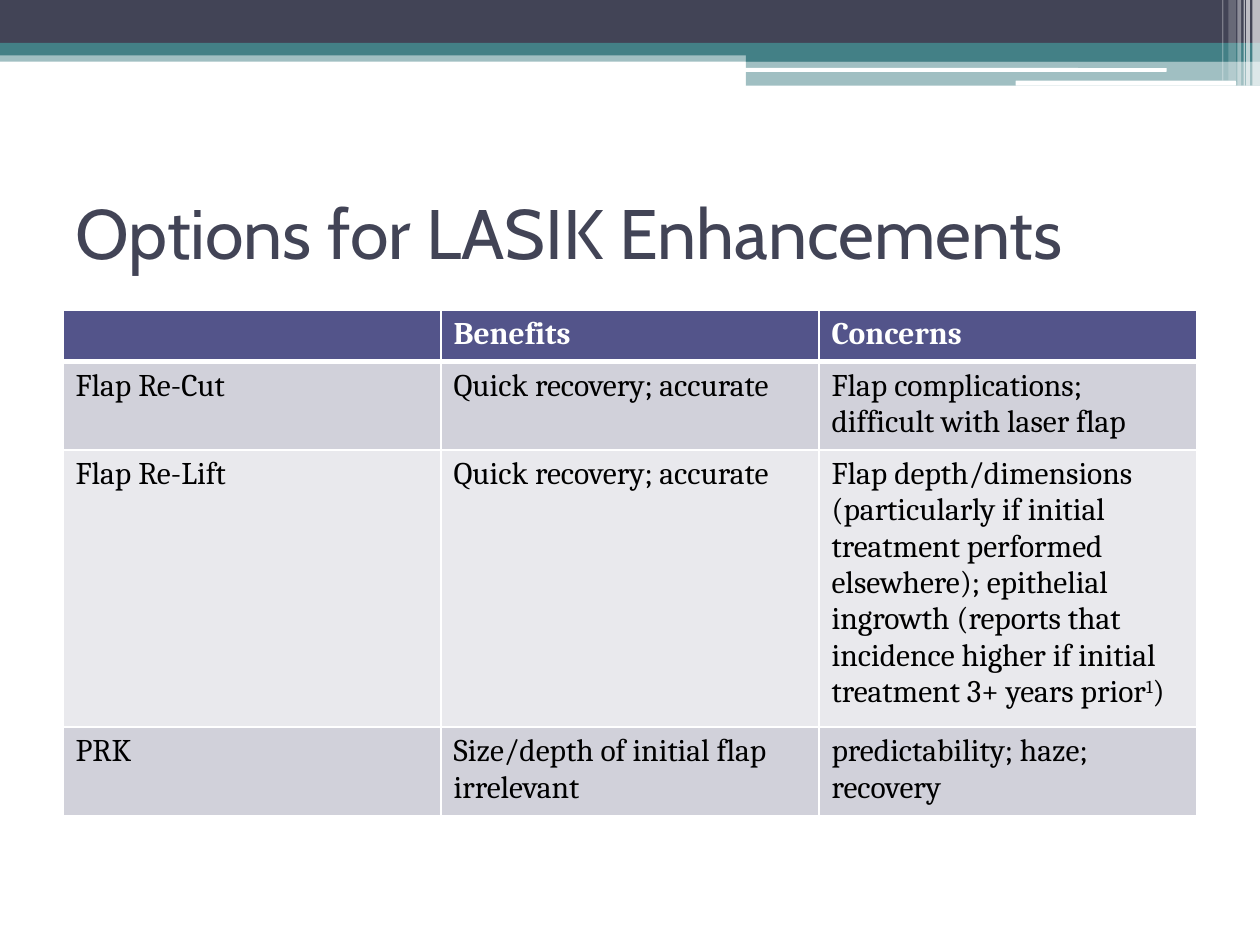
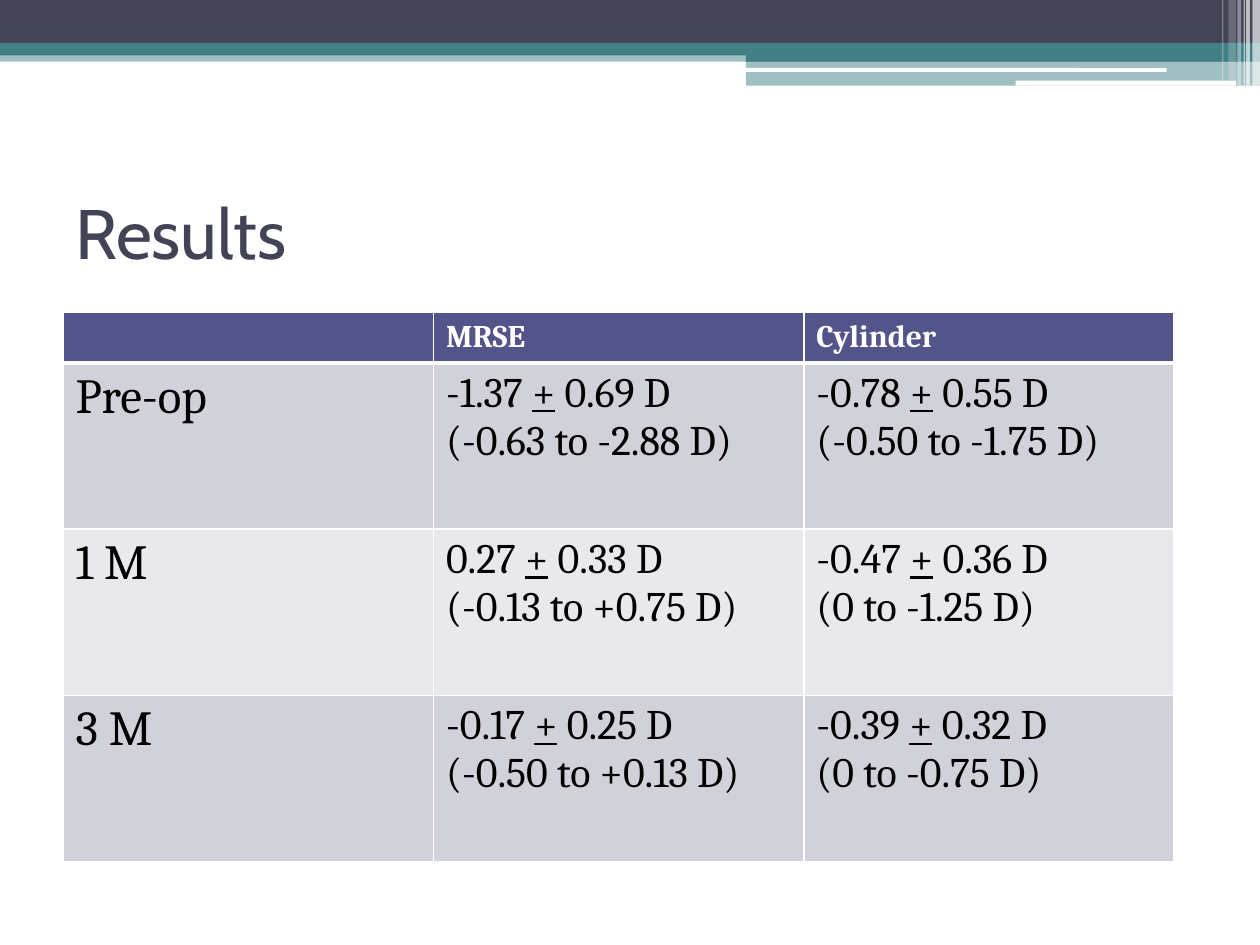
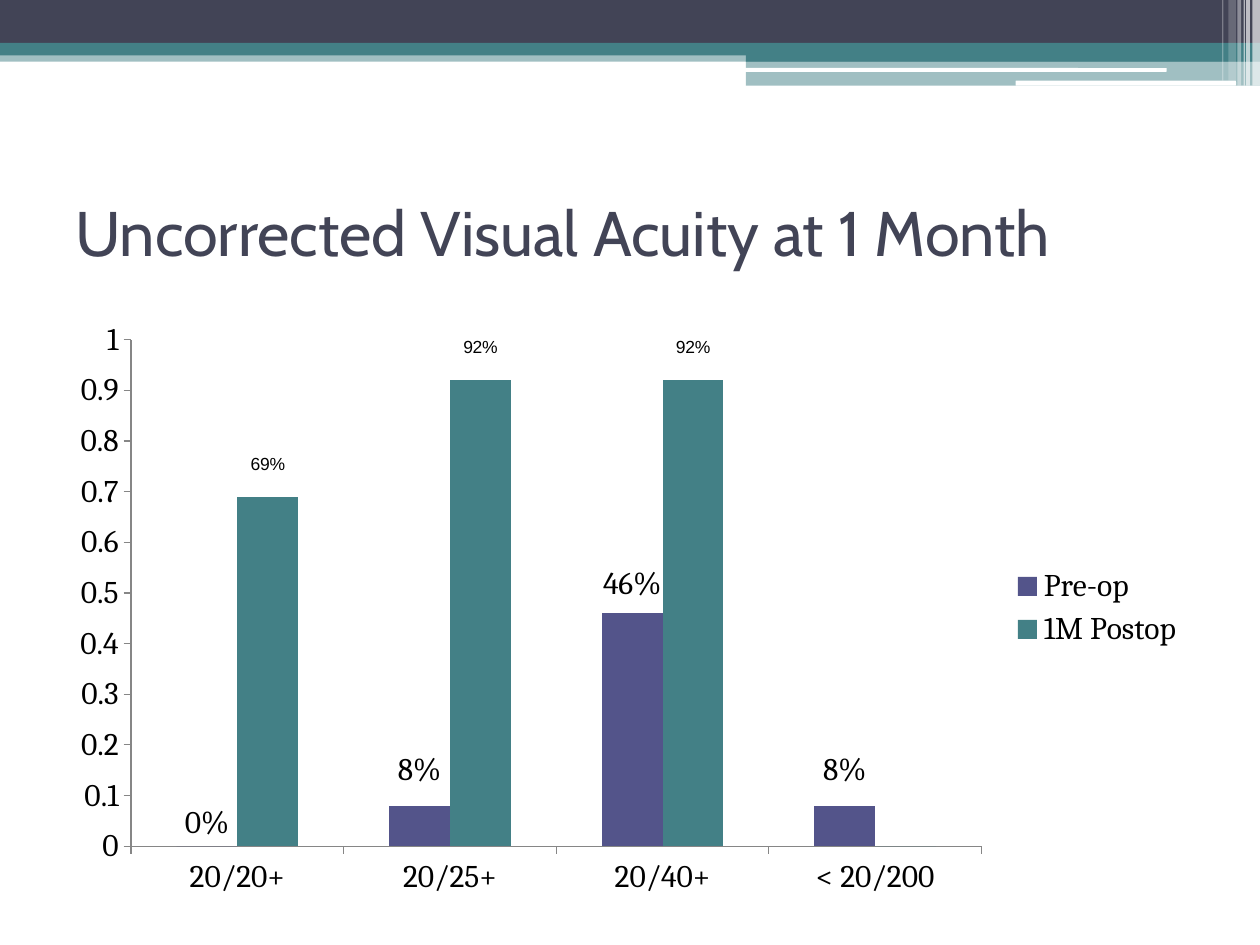
from lxml import etree
from pptx import Presentation
from pptx.chart.data import CategoryChartData
from pptx.dml.color import RGBColor
from pptx.enum.chart import XL_CHART_TYPE as ChartType
from pptx.enum.chart import XL_LABEL_POSITION as LabelPosition
from pptx.enum.chart import XL_LEGEND_POSITION as LegendPosition
from pptx.enum.chart import XL_TICK_MARK as TickMark
from pptx.enum.shapes import MSO_SHAPE as Shape
from pptx.enum.text import MSO_ANCHOR as Anchor
from pptx.oxml import parse_xml
from pptx.oxml.ns import nsdecls, qn
from pptx.util import Inches, Pt

SLATE = RGBColor(0x42, 0x44, 0x56)
TEAL = RGBColor(0x43, 0x80, 0x86)
INDIGO = RGBColor(0x53, 0x54, 0x8A)
ROW_DARK = RGBColor(0xD1, 0xD1, 0xDA)
ROW_LIGHT = RGBColor(0xE9, 0xE9, 0xED)
AXIS_GRAY = RGBColor(0x86, 0x86, 0x86)
WHITE = RGBColor(0xFF, 0xFF, 0xFF)
BLACK = RGBColor(0, 0, 0)
TITLE_FONT, BODY_FONT = "Cabin", "Cambria"

# Header decoration: left, top, width, height, colour, opacity in percent
BANDS = [
    (0, 0.4, 10, 0.09, TEAL, 50),
    (0, 0, 10, 0.34, SLATE, 100),
    (0, 0.34, 10, 0.1, TEAL, 100),
    (5.92, 0.39, 4.08, 0.1, TEAL, 100),
    (5.92, 0.48, 4.08, 0.2, TEAL, 50),
    (5.91, 0.54, 3.35, 0.03, WHITE, 100),
    (8.06, 0.64, 1.75, 0.04, WHITE, 100),
    (9.94, 0, 0.06, 0.68, WHITE, 65),
    (9.89, 0, 0.03, 0.68, WHITE, 65),
    (9.87, 0, 0.01, 0.68, WHITE, 60),
    (9.82, 0, 0.03, 0.68, WHITE, 40),
    (9.75, 0, 0.06, 0.64, WHITE, 20),
    (9.7, 0, 0.01, 0.64, WHITE, 30),
]
TITLES = [
    ("Options for LASIK Enhancements", 40),
    ("Results", 40),
    ("Uncorrected Visual Acuity at 1 Month", 36),
]


def add_run(paragraph, text, size, color, font=BODY_FONT, bold=False):
    run = paragraph.add_run()
    run.text = text
    run.font.name, run.font.size, run.font.bold = font, Pt(size), bold
    run.font.color.rgb = color
    return run


def add_grid(slide, top, col_width, row_heights, rows, label_size, body_size):
    """Each cell is a tuple of runs: "+" is underlined, "1" raised, "\\n" breaks."""
    table = slide.shapes.add_table(
        len(rows), len(rows[0]), Inches(0.5), Inches(top),
        Inches(col_width * len(rows[0])), Inches(sum(row_heights))).table
    for column in table.columns:
        column.width = Inches(col_width)
    for r, (row, height) in enumerate(zip(rows, row_heights)):
        table.rows[r].height = Inches(height)
        for c, runs in enumerate(row):
            cell = table.cell(r, c)
            paragraph = cell.text_frame.paragraphs[0]
            size = 18 if r == 0 else label_size if c == 0 else body_size
            for text in runs:
                if text == "\n":
                    paragraph.add_line_break()
                    continue
                run = add_run(paragraph, text, size, BLACK if r else WHITE, bold=r == 0)
                if text == "+":
                    run.font.underline = True
                elif text == "1":
                    run.font._element.set("baseline", "30000")
            # White borders, heavier under the header; they precede the fill
            for side in ("L", "R", "T", "B"):
                heavy = (side == "B" and r == 0) or (side == "T" and r == 1)
                cell._tc.get_or_add_tcPr().append(parse_xml(
                    f'<a:ln{side} {nsdecls("a")} w="{Pt(3 if heavy else 1)}"><a:solidFill>'
                    f'<a:srgbClr val="{WHITE}"/></a:solidFill></a:ln{side}>'))
            cell.fill.solid()
            cell.fill.fore_color.rgb = INDIGO if r == 0 else ROW_DARK if r % 2 else ROW_LIGHT


prs = Presentation()
prs.slide_width, prs.slide_height = Inches(10), Inches(7.5)

# Header bands and title on every slide
slides = []
for title, title_size in TITLES:
    slide = prs.slides.add_slide(prs.slide_layouts[6])
    slides.append(slide)
    for left, top, width, height, color, opacity in BANDS:
        outline = Shape.ROUNDED_RECTANGLE if height in (0.03, 0.04) else Shape.RECTANGLE
        band = slide.shapes.add_shape(
            outline, Inches(left), Inches(top), Inches(width), Inches(height))
        band.shadow.inherit = False
        band.line.fill.background()
        band.fill.solid()
        band.fill.fore_color.rgb = color
        if opacity < 100:
            tint = band._element.spPr.find(".//" + qn("a:srgbClr"))
            etree.SubElement(tint, qn("a:alpha"), val=str(opacity * 1000))
    heading = slide.shapes.add_textbox(
        Inches(0.5), Inches(1.25), Inches(9), Inches(1.17)).text_frame
    heading.word_wrap = True
    heading.vertical_anchor = Anchor.MIDDLE
    add_run(heading.paragraphs[0], title, title_size, SLATE, TITLE_FONT)
options_slide, results_slide, acuity_slide = slides

# Enhancement options
options = [
    ((), ("Benefits",), ("Concerns",)),
    (("Flap Re-Cut",), ("Quick recovery; accurate",),
     ("Flap complications; difficult with laser flap",)),
    (("Flap Re-Lift",), ("Quick recovery; accurate",),
     ("Flap depth/dimensions (particularly if initial treatment performed elsewhere); "
      "epithelial ingrowth (reports that incidence higher if initial treatment "
      "3+ years prior", "1", ")")),
    (("PRK",), ("Size/depth of initial flap irrelevant",),
     ("predictability; haze; recovery",)),
]
add_grid(options_slide, 2.46, 3, [0.41, 0.67, 2.12, 0.67], options, 18, 18)

# Refraction results: mean, deviation and range for each measure
measurements = [
    ("Pre-op", ("-1.37", "0.69", "-0.63 to -2.88"), ("-0.78", "0.55", "-0.50 to -1.75")),
    ("1 M", ("0.27", "0.33", "-0.13 to +0.75"), ("-0.47", "0.36", "0 to -1.25")),
    ("3 M", ("-0.17", "0.25", "-0.50 to +0.13"), ("-0.39", "0.32", "0 to -0.75")),
]
results = [((), ("MRSE",), ("Cylinder",))]
for visit, *measures in measurements:
    results.append([(visit,)] + [
        (f"{mean} ", "+", f" {deviation} D", "\n", f"({span} D)")
        for mean, deviation, span in measures])
add_grid(results_slide, 2.48, 2.94, [0.35] + [1.32] * 3, results, 28, 24)

# Visual acuity chart
acuity = CategoryChartData()
acuity.categories = ["20/20+", "20/25+", "20/40+", "< 20/200"]
acuity.add_series("Pre-op", (0, 0.08, 0.46, 0.08))
acuity.add_series("1M Postop", (0.69, 0.92, 0.92, 0))
chart = acuity_slide.shapes.add_chart(
    ChartType.COLUMN_CLUSTERED, Inches(0.5), Inches(2.46), Inches(9), Inches(4.73),
    acuity).chart
chart.has_title = False
chart.font.name, chart.font.size = BODY_FONT, Pt(18)
chart.font.color.rgb = BLACK
chart.has_legend = True
chart.legend.position = LegendPosition.RIGHT
chart.legend.include_in_layout = False

value_axis = chart.value_axis
value_axis.minimum_scale, value_axis.maximum_scale, value_axis.major_unit = 0, 1, 0.1
value_axis.has_major_gridlines = False
value_axis.tick_labels.number_format = "General"
value_axis.tick_labels.number_format_is_linked = False
for axis in (value_axis, chart.category_axis):
    axis.major_tick_mark = TickMark.OUTSIDE
    axis.format.line.color.rgb = AXIS_GRAY

plot = chart.plots[0]
plot.vary_by_categories = False
plot.gap_width, plot.overlap = 150, 0
plot_area = chart._chartSpace.chart.plotArea
for layout in plot_area.findall(qn("c:layout")):
    plot_area.remove(layout)
plot_area.insert(0, parse_xml(
    f'<c:layout {nsdecls("c")}><c:manualLayout><c:layoutTarget val="inner"/>'
    '<c:xMode val="edge"/><c:yMode val="edge"/><c:x val="0.06"/><c:y val="0.05"/>'
    '<c:w val="0.75"/><c:h val="0.85"/></c:manualLayout></c:layout>'))

# Series colour, label font and size, and upward label shift by point
series_styles = [
    (INDIGO, BODY_FONT, 18, {1: -0.02, 2: -0.01, 3: -0.02}),
    (TEAL, "Arial", 10, {0: -0.03, 1: -0.03, 2: -0.03}),
]
for series, (color, font, size, shifts) in zip(plot.series, series_styles):
    series.format.fill.solid()
    series.format.fill.fore_color.rgb = color
    series.invert_if_negative = False
    labels = series.data_labels
    labels.show_value = color == INDIGO
    labels.number_format, labels.number_format_is_linked = "0%", False
    labels.position = LabelPosition.OUTSIDE_END
    # No leader lines between bars and shifted labels
    for leader in labels._element.findall(qn("c:showLeaderLines")):
        labels._element.remove(leader)
    etree.SubElement(labels._element, qn("c:showLeaderLines"), val="0")
    for index, shift in shifts.items():
        label = series.points[index].data_label
        label.font.name, label.font.size = font, Pt(size)
        label.position = LabelPosition.OUTSIDE_END
        point_label = labels._element.findall(qn("c:dLbl"))[-1]
        point_label.insert(1, parse_xml(
            f'<c:layout {nsdecls("c")}><c:manualLayout><c:x val="0"/>'
            f'<c:y val="{shift}"/></c:manualLayout></c:layout>'))
        point_label.insert(2, parse_xml(
            f'<c:numFmt {nsdecls("c")} formatCode="0%" sourceLinked="0"/>'))

prs.save("out.pptx")
